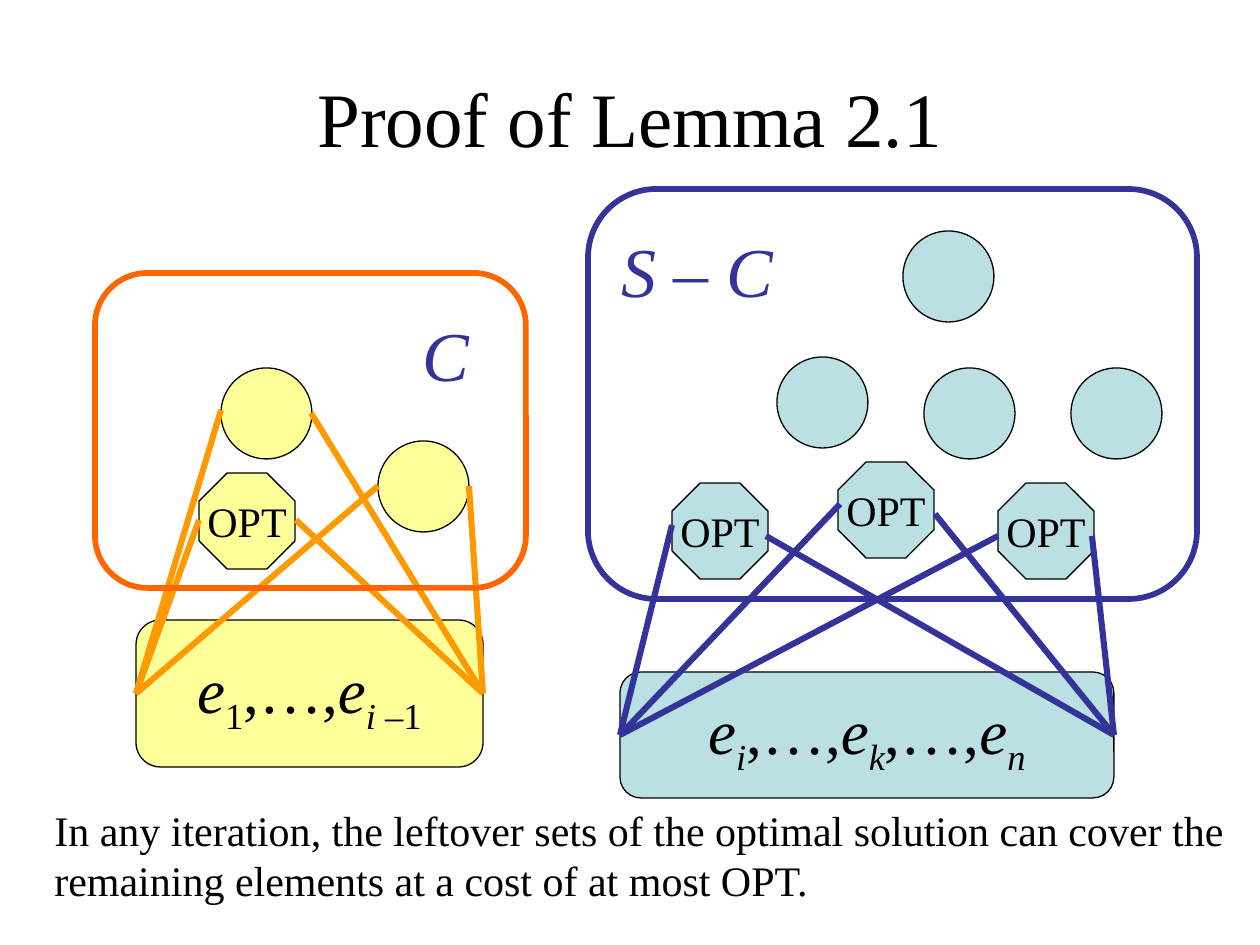
from dataclasses import dataclass

from lxml.etree import SubElement
from pptx import Presentation
from pptx.dml.color import RGBColor
from pptx.enum.shapes import MSO_CONNECTOR, MSO_SHAPE
from pptx.enum.text import MSO_ANCHOR, PP_ALIGN
from pptx.oxml.ns import qn
from pptx.util import Pt

EMU_PER_PX = 914400 / 126
LEFT, RIGHT = 1, 3  # connection sites of a rectangle


@dataclass(frozen=True)
class Theme:
    font: str = "Times New Roman"
    ink: str = "000000"
    blue: str = "333399"
    orange: str = "FF9900"
    frame_orange: str = "FF6600"
    yellow: str = "FFFF99"
    teal: str = "BBE0E3"
    title: int = 44
    label: int = 40
    elements: int = 36
    body: int = 24
    outline: float = 0.75
    frame: float = 3.25
    link: float = 3.5


THEME = Theme()

# Content: positions are (left, top, width, height) or (x, y) in px
TITLE = "Proof of Lemma 2.1"
TITLE_BOX = (63, 38, 1134, 158)
CAPTION = ("In any iteration, the leftover sets of the optimal solution can cover the\n"
           "remaining elements at a cost of at most OPT.")
CAPTION_BOX = (42, 798, 1205, 115)
CIRCLE, OCTAGON = 91, 96

# Element runs are (text, italic, subscript)
COMMA = (",…,", False, False)
E = ("e", True, False)
FAMILIES = [
    {
        "label": "C", "label_box": (410, 305, 73, 97),
        "fill": THEME.yellow, "link": THEME.orange, "frame": THEME.frame_orange,
        "frame_box": (95, 273, 431, 315), "frame_in_front": True,
        "elements": [E, ("1", False, True), COMMA,
                     E, ("i –", True, True), ("1", False, True)],
        "elements_box": (136, 620, 347, 147),
        "circles": [(221, 368), (378, 441)],
        "optimal": [(199, 473)],
        "links": {LEFT: [(199, 520), (221, 410), (378, 486)],
                  RIGHT: [(311, 413), (296, 520), (469, 486)]},
    },
    {
        "label": "S – C", "label_box": (609, 221, 199, 97),
        "fill": THEME.teal, "link": THEME.blue, "frame": THEME.blue,
        "frame_box": (588, 189, 609, 410), "frame_in_front": False,
        "elements": [E, ("i", True, True), COMMA, E, ("k", True, True), COMMA,
                     E, ("n", True, True)],
        "elements_box": (620, 672, 494, 126),
        "circles": [(903, 231), (777, 357), (924, 368), (1071, 368)],
        "optimal": [(672, 483), (838, 462), (998, 483)],
        "links": {LEFT: [(998, 536), (840, 504), (672, 525)],
                  RIGHT: [(1092, 536), (766, 536), (935, 514)]},
    },
]


def px(*lengths):
    return [round(n * EMU_PER_PX) for n in lengths]


def style(run, size, color=THEME.ink, italic=False):
    run.font.name = THEME.font
    run.font.size = Pt(size)
    run.font.color.rgb = RGBColor.from_string(color)
    run.font.italic = italic


def add_text(slide, text, box, size, color=THEME.ink, italic=False, wrap=True):
    frame = slide.shapes.add_textbox(*px(*box)).text_frame
    frame.word_wrap = wrap
    frame.text = text
    for paragraph in frame.paragraphs:
        for run in paragraph.runs:
            style(run, size, color, italic)
    return frame


def add_outlined(slide, preset, box, fill=None, line=THEME.ink, width=THEME.outline):
    shape = slide.shapes.add_shape(preset, *px(*box))
    shape.shadow.inherit = False
    if fill:
        shape.fill.solid()
        shape.fill.fore_color.rgb = RGBColor.from_string(fill)
    else:
        shape.fill.background()
    shape.line.color.rgb = RGBColor.from_string(line)
    shape.line.width = Pt(width)
    return shape


def center_unwrapped(shape):
    frame = shape.text_frame
    frame.word_wrap = False
    frame.vertical_anchor = MSO_ANCHOR.MIDDLE
    frame.paragraphs[0].alignment = PP_ALIGN.CENTER
    return frame.paragraphs[0]


def add_elements(slide, family):
    box = add_outlined(slide, MSO_SHAPE.ROUNDED_RECTANGLE, family["elements_box"], family["fill"])
    paragraph = center_unwrapped(box)
    for text, italic, subscript in family["elements"]:
        run = paragraph.add_run()
        run.text = text
        style(run, THEME.elements, italic=italic)
        if subscript:
            run._r.get_or_add_rPr().set("baseline", "-25000")
    return box


def add_sets(slide, family):
    for x, y in family["circles"]:
        add_outlined(slide, MSO_SHAPE.OVAL, (x, y, CIRCLE, CIRCLE), family["fill"])
    for x, y in family["optimal"]:
        octagon = add_outlined(slide, MSO_SHAPE.OCTAGON, (x, y, OCTAGON, OCTAGON), family["fill"])
        paragraph = center_unwrapped(octagon)
        paragraph.text = "OPT"
        style(paragraph.runs[0], THEME.body)


def add_links(slide, family, elements):
    for site, starts in family["links"].items():
        for start in starts:
            link = slide.shapes.add_connector(MSO_CONNECTOR.STRAIGHT, *px(*start, *start))
            link.end_connect(elements, site)
            link.line.color.rgb = RGBColor.from_string(family["link"])
            link.line.width = Pt(THEME.link)
            SubElement(link._element.spPr, qn("a:effectLst"))


def add_frame(slide, family):
    add_outlined(slide, MSO_SHAPE.ROUNDED_RECTANGLE, family["frame_box"],
                 line=family["frame"], width=THEME.frame)
    add_text(slide, family["label"], family["label_box"], THEME.label, THEME.blue, italic=True)


def main():
    deck = Presentation()
    deck.slide_width, deck.slide_height = px(1260, 945)
    slide = deck.slides.add_slide(deck.slide_layouts[6])

    # Title
    title = add_text(slide, TITLE, TITLE_BOX, THEME.title)
    title.vertical_anchor = MSO_ANCHOR.MIDDLE
    title.paragraphs[0].alignment = PP_ALIGN.CENTER

    # Each family of sets with the elements it covers
    for family in FAMILIES:
        elements = add_elements(slide, family)
        add_sets(slide, family)
        if not family["frame_in_front"]:
            add_frame(slide, family)
        add_links(slide, family, elements)
        if family["frame_in_front"]:
            add_frame(slide, family)

    # Conclusion
    add_text(slide, CAPTION, CAPTION_BOX, THEME.body, wrap=False)
    deck.save("out.pptx")


if __name__ == "__main__":
    main()
